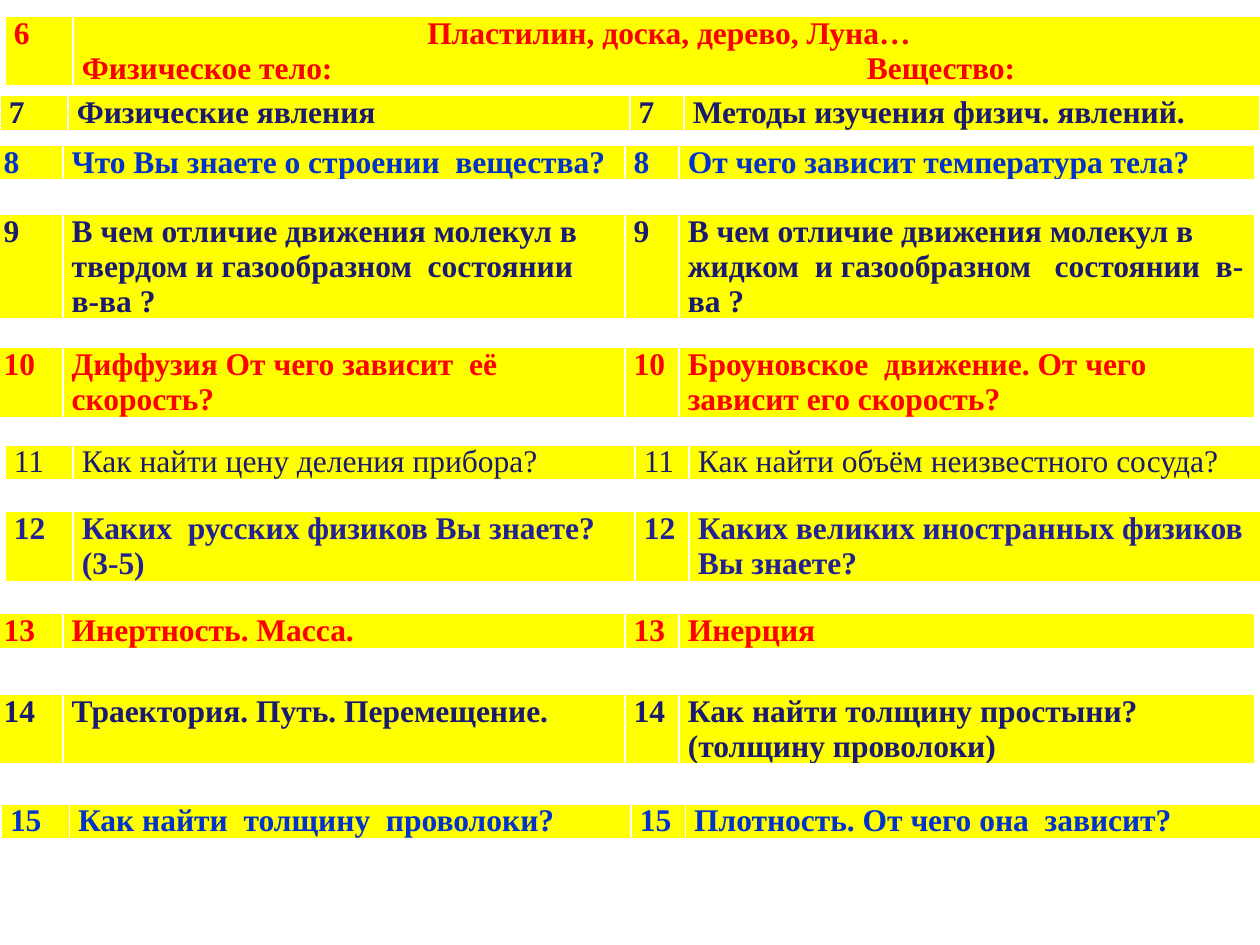
from lxml import etree
from pptx import Presentation
from pptx.dml.color import RGBColor
from pptx.enum.text import PP_ALIGN
from pptx.oxml.ns import qn
from pptx.util import Inches, Pt

CENTER = PP_ALIGN.CENTER
FONT, SIZE = "Times New Roman", Pt(18)
LINE = 0.3
COLS = (0.54, 4.46, 0.43, 4.57)
WIDE = (COLS[0], sum(COLS[1:]))
TAB = 6.23
LEFT, MID, RIGHT = -0.04, 0, 0.04
HUES = {
    "fill": "FFFF00",
    "edge": "FFFFFF",
    "red": "FF0000",
    "rose": "F90101",
    "navy": "1A1A70",
    "blue": "0033CC",
    "indigo": "222292",
}

# number, left, top, text lines, colour, bold, first question, second question
ROWS = [
    (7, MID, 0.76, 1, "navy", True,
     "Физические явления", "Методы изучения физич. явлений."),
    (8, LEFT, 1.15, 1, "blue", True,
     "Что Вы знаете о строении  вещества?",
     "От чего зависит температура тела?"),
    (9, LEFT, 1.7, 3, "navy", True,
     "В чем отличие движения молекул в твердом и газообразном  состоянии  в-ва ?",
     "В чем отличие движения молекул в жидком  и газообразном   состоянии  в-ва ?"),
    (10, LEFT, 2.76, 2, "red", True,
     "Диффузия От чего зависит  её скорость?",
     "Броуновское  движение. От чего зависит его скорость?"),
    (11, RIGHT, 3.53, 1, "navy", False,
     "Как найти цену деления прибора?",
     "Как найти объём неизвестного сосуда?"),
    (12, RIGHT, 4.06, 2, "indigo", True,
     "Каких  русских физиков Вы знаете?\n(3-5)",
     "Каких великих иностранных физиков Вы знаете?"),
    (13, LEFT, 4.87, 1, "red", True, "Инертность. Масса.", "Инерция"),
    (14, LEFT, 5.51, 2, "navy", True,
     "Траектория. Путь. Перемещение.",
     "Как найти толщину простыни? (толщину проволоки)"),
    (15, 0.01, 6.38, 1, "blue", True,
     "Как найти  толщину  проволоки?",
     "Плотность. От чего она  зависит?"),
]


def color(name):
    return RGBColor.from_string(HUES[name])


def add_edges(cell):
    props = cell._tc.get_or_add_tcPr()
    for side in ("lnL", "lnR", "lnT", "lnB"):
        line = etree.SubElement(props, qn("a:" + side), w=str(Pt(1)))
        fill = etree.SubElement(line, qn("a:solidFill"))
        etree.SubElement(fill, qn("a:srgbClr"), val=HUES["edge"])


def add_tab(para, pos):
    props = para._p.get_or_add_pPr()
    tabs = etree.SubElement(props, qn("a:tabLst"))
    etree.SubElement(tabs, qn("a:tab"), pos=str(Inches(pos)), algn="l")


def fill_cell(cell, text, hue, bold):
    cell.margin_left = cell.margin_right = Inches(0.07)
    cell.margin_top = cell.margin_bottom = 0
    add_edges(cell)
    cell.fill.solid()
    cell.fill.fore_color.rgb = color("fill")
    cell.text_frame.text = text
    for para in cell.text_frame.paragraphs:
        for part in (para, *para.runs):
            part.font.name, part.font.size = FONT, SIZE
            part.font.bold = bold
            part.font.color.rgb = color(hue)


def add_strip(slide, left, top, lines, cols, texts, hue, bold=True):
    """Add a one-row table whose row grows to fit its text."""
    high = Inches(LINE * lines)
    frame = slide.shapes.add_table(
        1, len(cols), Inches(left), Inches(top), Inches(sum(cols)), high)
    table = frame.table
    table.first_row = table.horz_banding = False
    table.rows[0].height = 0
    for col, width in zip(table.columns, cols):
        col.width = Inches(width)
    frame.height = high
    for cell, text in zip(table.rows[0].cells, texts):
        fill_cell(cell, text, hue, bold)
    return table


def main():
    prs = Presentation()
    prs.slide_width, prs.slide_height = Inches(10), Inches(7.5)
    slide = prs.slides.add_slide(prs.slide_layouts[6])

    task = "Пластилин, доска, дерево, Луна…\nФизическое тело:\tВещество:"
    head = add_strip(slide, RIGHT, 0.13, 2, WIDE, ("6", task), "rose")
    words, kinds = head.cell(0, 1).text_frame.paragraphs
    words.alignment = CENTER
    add_tab(kinds, TAB)

    for num, left, top, lines, hue, bold, first, second in ROWS:
        texts = (str(num), first, str(num), second)
        add_strip(slide, left, top, lines, COLS, texts, hue, bold)
    prs.save("out.pptx")


if __name__ == "__main__":
    main()
